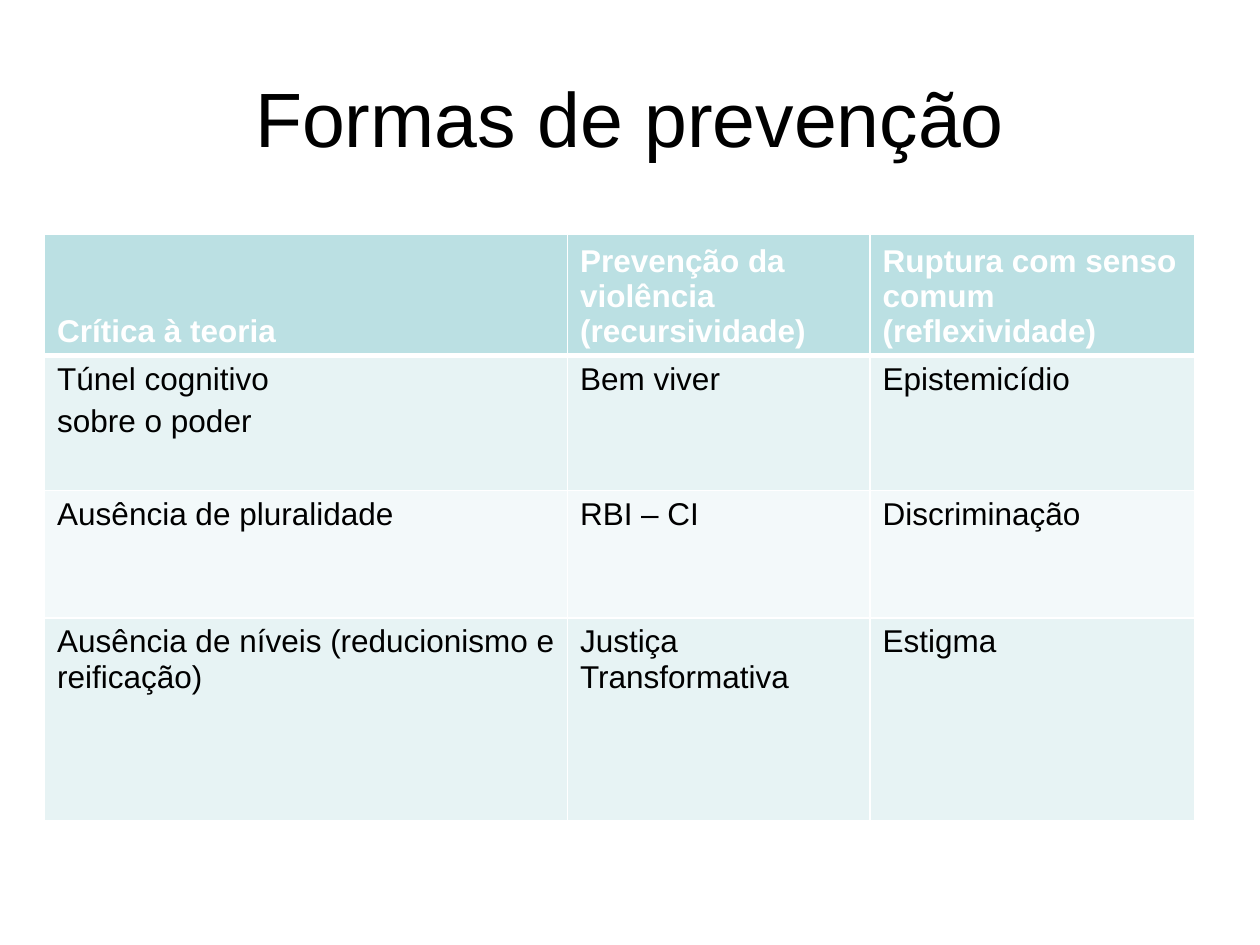
import pptx
import pptx.dml.color
import pptx.enum.text
import pptx.oxml
import pptx.oxml.ns
import pptx.util
from dataclasses import dataclass

Cm, Pt = pptx.util.Cm, pptx.util.Pt
RGB = pptx.dml.color.RGBColor.from_string
ALIGN = pptx.enum.text.PP_ALIGN
ANCHOR = pptx.enum.text.MSO_ANCHOR


@dataclass(frozen=True)
class Theme:
    font: str = "Arial"
    title_size: int = 44
    cell_size: int = 18
    ink: str = "000000"
    white: str = "FFFFFF"
    header: str = "BBE0E3"
    bands: tuple = ("E7F3F4", "F3F9FA")
    rule: int = 1
    header_rule: int = 3
    item_gap: float = 3.6


THEME = Theme()
TITLE = "Formas de prevenção"
COLS = (10.54, 6.1, 6.55)
ROWS = (2.44, 2.72, 2.57, 4.09)
# A newline starts a new paragraph
CELLS = (
    ("Crítica à teoria", "Prevenção da violência (recursividade)",
     "Ruptura com senso comum (reflexividade)"),
    ("Túnel cognitivo\nsobre o poder", "Bem viver", "Epistemicídio"),
    ("Ausência de pluralidade", "RBI – CI", "Discriminação"),
    ("Ausência de níveis (reducionismo e reificação)",
     "Justiça Transformativa", "Estigma"),
)


def set_attrs(obj, values):
    for name, value in values.items():
        setattr(obj, name, value)


def format_font(p, size, color, bold=False):
    set_attrs(p.font, {"name": THEME.font, "size": Pt(size), "bold": bold})
    p.font.color.rgb = RGB(color)


def set_borders(cell, widths):
    """Draw white cell borders; widths maps L, R, T, B to points."""
    tcPr = cell._tc.get_or_add_tcPr()
    for side, width in widths.items():
        tcPr.append(pptx.oxml.parse_xml(
            f'<a:ln{side} {pptx.oxml.ns.nsdecls("a")} w="{Pt(width)}">'
            f'<a:solidFill><a:srgbClr val="{THEME.white}"/></a:solidFill>'
            f'</a:ln{side}>'))


def add_title(slide, left, top, width, height):
    sp = slide.shapes.title
    set_attrs(sp, {"left": left, "top": top, "width": width, "height": height})
    tf = sp.text_frame
    set_attrs(tf, {"text": TITLE, "vertical_anchor": ANCHOR.MIDDLE})
    p = tf.paragraphs[0]
    p.alignment = ALIGN.CENTER
    format_font(p, THEME.title_size, THEME.ink)


def fill_cell(cell, text, row):
    is_header = row == 0
    # Borders, with a heavier rule under the header
    set_borders(cell, {
        "L": THEME.rule, "R": THEME.rule,
        "T": THEME.header_rule if row == 1 else THEME.rule,
        "B": THEME.header_rule if is_header else THEME.rule})
    # Background
    cell.fill.solid()
    cell.fill.fore_color.rgb = RGB(
        THEME.header if is_header else THEME.bands[(row - 1) % 2])
    # Text
    cell.vertical_anchor = ANCHOR.BOTTOM if is_header else ANCHOR.TOP
    cell.text_frame.text = text
    for i, p in enumerate(cell.text_frame.paragraphs):
        if i:
            p.space_before = Pt(THEME.item_gap)
        format_font(p, THEME.cell_size,
                    THEME.white if is_header else THEME.ink, is_header)


def add_prevention_table(slide, left, top):
    table = slide.shapes.add_table(len(ROWS), len(COLS), left, top,
                                   Cm(sum(COLS)), Cm(sum(ROWS))).table
    for col, width in zip(table.columns, COLS):
        col.width = Cm(width)
    for r, (height, texts) in enumerate(zip(ROWS, CELLS)):
        table.rows[r].height = Cm(height)
        for c, text in enumerate(texts):
            fill_cell(table.cell(r, c), text, r)


def main():
    prs = pptx.Presentation()
    set_attrs(prs, {"slide_width": Cm(25.4), "slide_height": Cm(19.05)})
    s = prs.slides.add_slide(prs.slide_layouts[5])
    add_title(s, Cm(1.27), Cm(0.76), Cm(22.86), Cm(3.18))
    add_prevention_table(s, Cm(0.9), Cm(4.73))
    prs.save("out.pptx")


if __name__ == "__main__":
    main()
